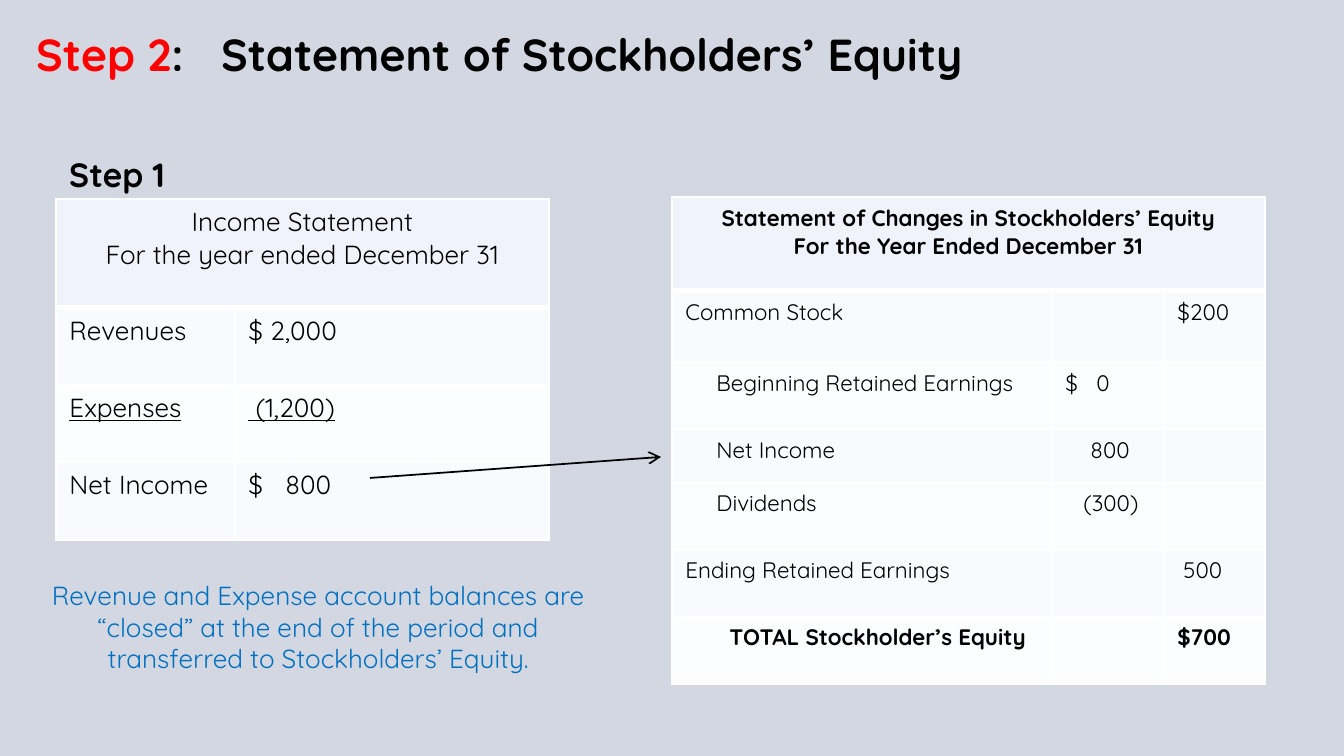
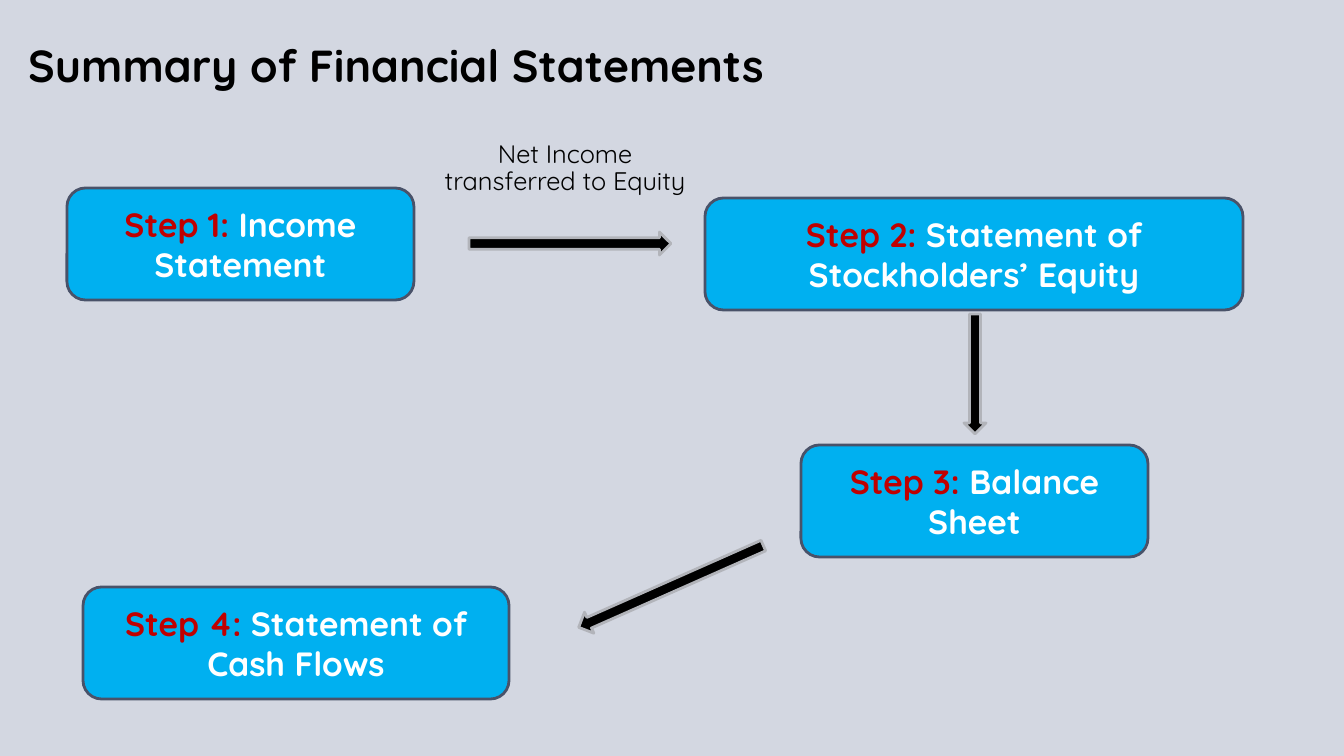
from dataclasses import dataclass

from lxml import etree
from pptx import Presentation
from pptx.dml.color import RGBColor
from pptx.enum.shapes import MSO_CONNECTOR, MSO_SHAPE
from pptx.enum.text import MSO_ANCHOR, PP_ALIGN
from pptx.oxml.ns import qn
from pptx.util import Emu, Pt

LEFT, CENTER = PP_ALIGN.LEFT, PP_ALIGN.CENTER
TOP, MIDDLE = MSO_ANCHOR.TOP, MSO_ANCHOR.MIDDLE
ROUNDED, ARROW = MSO_SHAPE.ROUNDED_RECTANGLE, MSO_SHAPE.RIGHT_ARROW
STRAIGHT = MSO_CONNECTOR.STRAIGHT
EMU_PER_PX = 914400 / 134.4


@dataclass(frozen=True)
class Theme:
    font: str = "Quicksand"
    background: str = "D3D7E1"
    ink: str = "000000"
    white: str = "FFFFFF"
    red: str = "FF0000"
    dark_red: str = "C00000"
    note: str = "0070C0"
    step_fill: str = "00B0F0"
    step_line: str = "495269"
    arrow_line: str = "B2B4BA"
    header: str = "F0F3FB"
    bands: tuple = ("F9FAFD", "FCFDFE")
    title_size: float = 24
    step_size: float = 18
    body_size: float = 14
    label_size: float = 13.6
    small_size: float = 12


T = Theme()


def px(value):
    return Emu(round(value * EMU_PER_PX))


def box(*values):
    return [px(v) for v in values]


def rgb(value):
    return RGBColor.from_string(value)


def run(text, color=T.ink, **fmt):
    return text, color, fmt


def para(*runs, indent=0, tab=0):
    return runs, indent, tab


def line(text, indent=0, tab=0, **fmt):
    return para(run(text, **fmt), indent=indent, tab=tab)


def write(tf, paras, size, align=LEFT, spacing=None):
    for i, (runs, indent, tab) in enumerate(paras):
        p = tf.paragraphs[0] if i == 0 else tf.add_paragraph()
        pPr = p._p.get_or_add_pPr()
        if indent:
            pPr.set("marL", str(px(indent)))
            pPr.set("indent", "0")
        if tab:
            tabs = etree.SubElement(pPr, qn("a:tabLst"))
            etree.SubElement(tabs, qn("a:tab"), pos=str(px(tab)), algn="l")
        p.alignment = align
        if spacing:
            p.line_spacing = spacing
        for text, color, fmt in runs:
            r = p.add_run()
            r.text = text
            for key, value in {"name": T.font, "size": Pt(size), **fmt}.items():
                setattr(r.font, key, value)
            r.font.color.rgb = rgb(color)


def add_text(s, bounds, paras, size, align=LEFT, anchor=TOP, spacing=None):
    tf = s.shapes.add_textbox(*box(*bounds)).text_frame
    tf.word_wrap = True
    tf.vertical_anchor = anchor
    write(tf, paras, size, align, spacing)


def add_block(s, kind, bounds, fill, outline, rotation=0):
    sp = s.shapes.add_shape(kind, *box(*bounds))
    sp.shadow.inherit = False
    sp.rotation = rotation
    sp.fill.solid()
    sp.fill.fore_color.rgb = rgb(fill)
    sp.line.color.rgb = rgb(outline)
    sp.line.width = Pt(1.5)
    return sp


def add_step(s, number, name, bounds):
    tf = add_block(s, ROUNDED, bounds, T.step_fill, T.step_line).text_frame
    tf.word_wrap = True
    tf.vertical_anchor = MIDDLE
    label = para(run(f"Step {number}: ", T.dark_red, bold=True),
                 run(name, T.white, bold=True))
    write(tf, [label], T.step_size, CENTER)


def add_arrow_line(s, start, end):
    c = s.shapes.add_connector(STRAIGHT, *box(*start, *end))
    c.line.color.rgb = rgb(T.ink)
    c.line.width = Pt(0.94)
    etree.SubElement(c.line._get_or_add_ln(), qn("a:tailEnd"), type="arrow")
    etree.SubElement(c._element.spPr, qn("a:effectLst"))


def format_cell(cell, fill, bottom):
    tcPr = cell._tc.get_or_add_tcPr()
    for side, width in {"L": 1, "R": 1, "T": 1, "B": bottom}.items():
        ln = etree.SubElement(tcPr, qn(f"a:ln{side}"), w=str(Pt(width)))
        solid = etree.SubElement(ln, qn("a:solidFill"))
        etree.SubElement(solid, qn("a:srgbClr"), val=T.white)
    cell.fill.solid()
    cell.fill.fore_color.rgb = rgb(fill)


def add_statement(s, corner, widths, heights, heading, rows, size):
    bounds = box(*corner, sum(widths), sum(heights))
    table = s.shapes.add_table(len(heights), len(widths), *bounds).table
    table.first_row = table.horz_banding = False
    for col, width in zip(table.columns, widths):
        col.width = px(width)
    for i, (row, height) in enumerate(zip(table.rows, heights)):
        row.height = px(height)
        for cell in row.cells:
            format_cell(cell, T.bands[(i - 1) % 2] if i else T.header, 1 if i else 3)
    head = table.cell(0, 0)
    head.merge(table.cell(0, len(widths) - 1))
    write(head.text_frame, heading, size, CENTER)
    for i, row in enumerate(rows, 1):
        for j, content in enumerate(row):
            write(table.cell(i, j).text_frame, [content or line("")], size)


def add_slide(prs, title, bounds):
    s = prs.slides.add_slide(prs.slide_layouts[6])
    s.background.fill.solid()
    s.background.fill.fore_color.rgb = rgb(T.background)
    add_text(s, bounds, [title], T.title_size)
    return s


def equity_slide(prs):
    title = para(run("Step 2", T.red, bold=True),
                 run(":\tStatement of Stockholders’ Equity", bold=True), tab=185)
    s = add_slide(prs, title, (23, 20, 1019, 67))
    add_statement(
        s, (672, 197), (380, 112, 101), (94, 71, 67, 54, 67, 67, 67),
        [line("Statement of Changes in Stockholders’ Equity", bold=True),
         line("For the Year Ended December 31", bold=True)],
        [(line("Common Stock"), None, line("$200")),
         (line("Beginning Retained Earnings", 31), line("$\t0", tab=31), None),
         (line("Net Income", 31), line("800", 25), None),
         (line("Dividends", 31), line("(300)", 18), None),
         (line("Ending Retained Earnings"), None, line("500", 6)),
         (line("TOTAL Stockholder’s Equity", 44, bold=True), None,
          line("$700", bold=True))],
        T.small_size)
    add_statement(
        s, (56, 199), (179, 314), (109, 77, 77, 78),
        [line("Income Statement"), line("For the year ended December 31")],
        [(line("Revenues"), line("$ 2,000")),
         (line("Expenses", underline=True),
          line(" (1,200)\t", tab=101, underline=True)),
         (line("Net Income"), line("$\t800", tab=37))],
        T.body_size)
    add_arrow_line(s, (370, 478), (661, 457))
    add_text(s, (56, 147, 168, 54), [line("Step 1", bold=True)], T.step_size)
    add_text(s, (26, 573, 585, 155),
             [line("Revenue and Expense account balances are “closed” at the end "
                   "of the period and transferred to Stockholders’ Equity.",
                   color=T.note)], T.body_size, CENTER)


def summary_slide(prs):
    s = add_slide(prs, line("Summary of Financial Statements", bold=True),
                  (15, 31, 907, 67))
    steps = [("Income Statement", 67, 188, 347),
             ("Statement of Stockholders’ Equity", 705, 198, 538),
             ("Balance Sheet", 801, 445, 347),
             ("Statement of Cash Flows", 83, 587, 426)]
    for number, (name, x, y, width) in enumerate(steps, 1):
        add_step(s, number, name, (x, y, width, 112))
    arrows = [((469, 232, 202, 23), 0), ((570, 575, 202, 23), 156.1),
              ((915, 363, 120, 22), 90)]
    for bounds, rotation in arrows:
        add_block(s, ARROW, bounds, T.ink, T.arrow_line, rotation)
    add_text(s, (419, 124, 292, 90), [line("Net Income transferred to Equity")],
             T.label_size, CENTER, MIDDLE, 0.9)


def main():
    prs = Presentation()
    prs.slide_width, prs.slide_height = box(1344, 756)
    equity_slide(prs)
    summary_slide(prs)
    prs.save("out.pptx")


if __name__ == "__main__":
    main()
